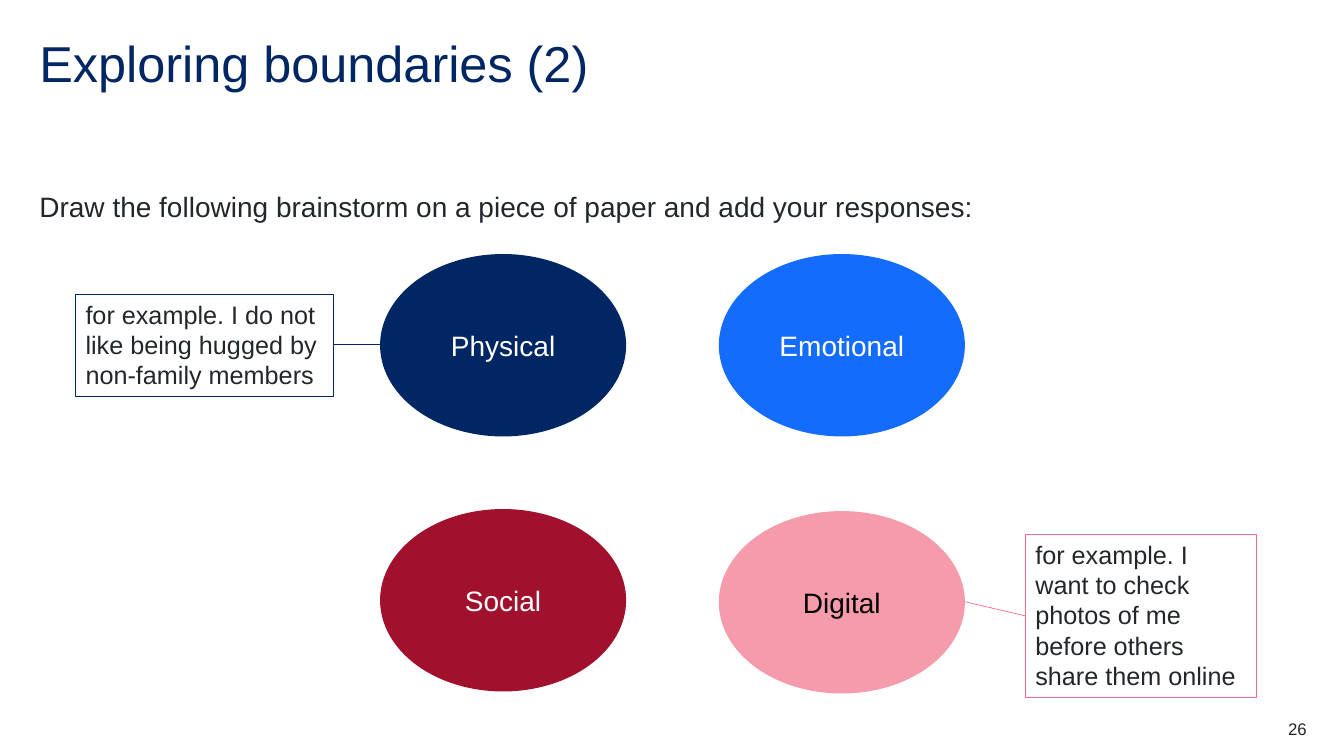
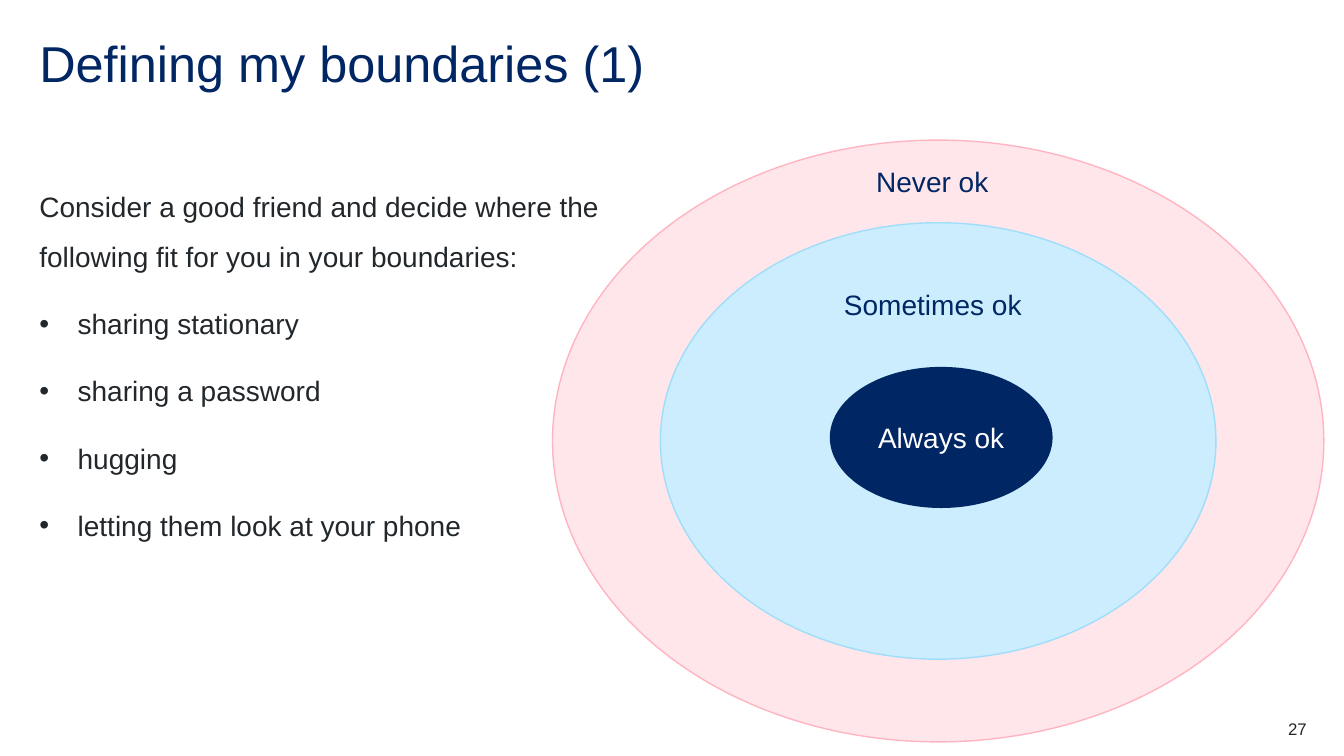
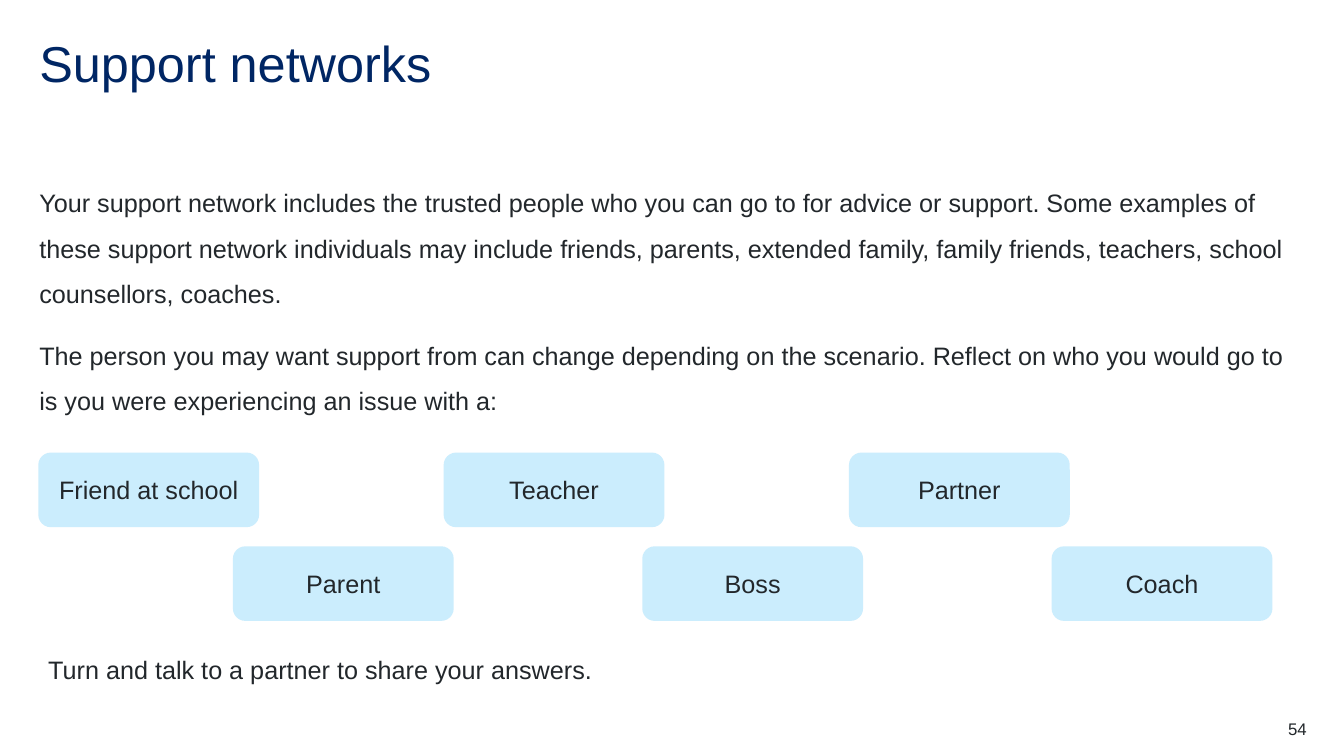
from dataclasses import dataclass

from lxml import etree
from pptx import Presentation
from pptx import util as u
from pptx.dml.color import RGBColor
from pptx.enum import shapes, text
from pptx.oxml.ns import qn

EMU_PER_PX = 9144  # 100 px to the inch
FONT = "Arial"
COLOURS = {
    "navy": "002664",
    "ink": "22272B",
    "white": "FFFFFF",
    "black": "000000",
    "blue": "146CFD",
    "crimson": "A1102C",
    "pink": "F59BAC",
    "coral": "FF6D84",
    "blush": "FFE6EA",
    "blush edge": "FFB5C1",
    "sky": "CBEDFD",
    "sky edge": "9FDEFB",
}
OVAL = shapes.MSO_SHAPE.OVAL
RECTANGLE = shapes.MSO_SHAPE.RECTANGLE
ROUNDED = shapes.MSO_SHAPE.ROUNDED_RECTANGLE
LEFT, CENTER, RIGHT = text.PP_ALIGN.LEFT, text.PP_ALIGN.CENTER, text.PP_ALIGN.RIGHT

MARGIN = 39
CONTENT_WIDTH = 1256
BODY_TOP = 171
BULLET_INDENT = 38
BODY_SPACING = {"line_spacing": 1.5, "space_after": u.Pt(12)}


@dataclass(frozen=True)
class Box:
    x: int
    y: int
    w: int
    h: int

    @property
    def middle(self) -> int:
        return self.y + self.h // 2

    @property
    def right(self) -> int:
        return self.x + self.w

    def emu(self) -> list[int]:
        return [px(n) for n in (self.x, self.y, self.w, self.h)]


@dataclass(frozen=True)
class Style:
    size: int
    colour: str = "ink"
    align: text.PP_ALIGN = LEFT


@dataclass(frozen=True)
class Panel:
    """A preset shape, with or without a label."""
    kind: shapes.MSO_SHAPE
    box: Box
    fill: str | None = None
    edge: str | None = None
    edge_width: float = 1
    label: str = ""
    style: Style = Style(20, "white", CENTER)
    anchor: text.MSO_ANCHOR = text.MSO_ANCHOR.MIDDLE


TITLE = Style(36, "navy")
BODY = Style(20)
SMALL_BODY = Style(18)
RING_LABEL = Style(20, "navy")
CARD_LABEL = Style(18, align=CENTER)
PAGE_NUMBER = Style(12, align=RIGHT)


def px(n: int) -> int:
    return u.Emu(n * EMU_PER_PX)


def rgb(name: str) -> RGBColor:
    return RGBColor.from_string(COLOURS[name])


def add_bullet(paragraph) -> None:
    props = paragraph._p.get_or_add_pPr()
    props.set("marL", str(px(BULLET_INDENT)))
    props.set("indent", str(-px(BULLET_INDENT)))
    etree.SubElement(props, qn("a:buFont")).set("typeface", FONT)
    etree.SubElement(props, qn("a:buChar")).set("char", "•")


def write(frame, lines: list[str], style: Style, spacing: dict | None = None,
          bullets_from: int | None = None) -> None:
    frame.word_wrap = True
    for index, line in enumerate(lines):
        paragraph = frame.paragraphs[0] if index == 0 else frame.add_paragraph()
        paragraph.alignment = style.align
        for name, value in (spacing or {}).items():
            setattr(paragraph, name, value)
        if bullets_from is not None and index >= bullets_from:
            add_bullet(paragraph)
        run = paragraph.add_run()
        run.text = line
        for name, value in {"name": FONT, "size": u.Pt(style.size)}.items():
            setattr(run.font, name, value)
        run.font.color.rgb = rgb(style.colour)


def add_text(slide, box: Box, lines: list[str], style: Style, spacing: dict | None = None,
             bullets_from: int | None = None, inset: bool = False) -> None:
    frame = slide.shapes.add_textbox(*box.emu()).text_frame
    if not inset:
        for side in ("left", "top", "right", "bottom"):
            setattr(frame, f"margin_{side}", 0)
    write(frame, lines, style, spacing, bullets_from)


def add_panel(slide, panel: Panel) -> None:
    shape = slide.shapes.add_shape(panel.kind, *panel.box.emu())
    shape.shadow.inherit = False
    for part, colour in ((shape.fill, panel.fill), (shape.line.fill, panel.edge)):
        if colour:
            part.solid()
            part.fore_color.rgb = rgb(colour)
        else:
            part.background()
    if panel.edge:
        shape.line.width = u.Pt(panel.edge_width)
    if panel.label:
        shape.text_frame.vertical_anchor = panel.anchor
        write(shape.text_frame, [panel.label], panel.style)


def add_link(slide, start: tuple[int, int], end: tuple[int, int], colour: str) -> None:
    link = slide.shapes.add_connector(
        shapes.MSO_CONNECTOR.STRAIGHT, *(px(n) for n in start + end))
    link.line.color.rgb = rgb(colour)
    link.line.width = u.Pt(0.5)
    etree.SubElement(link._element.spPr, qn("a:effectLst"))


def add_page(deck, title: str, number: int):
    """Add a slide with the shared title and page number."""
    slide = deck.slides.add_slide(deck.slide_layouts[6])
    add_text(slide, Box(MARGIN, 39, CONTENT_WIDTH, 60), [title], TITLE, {"line_spacing": 0.9})
    add_text(slide, Box(1217, 713, 79, 20), [str(number)], PAGE_NUMBER)
    return slide


def example(box: Box, edge: str, label: str) -> Panel:
    return Panel(RECTANGLE, box, edge=edge, edge_width=0.75, label=label,
                 style=SMALL_BODY, anchor=text.MSO_ANCHOR.TOP)


def build_exploring(deck) -> None:
    slide = add_page(deck, "Exploring boundaries (2)", 26)
    add_text(slide, Box(MARGIN, BODY_TOP, CONTENT_WIDTH, 68),
             ["Draw the following brainstorm on a piece of paper and add your responses:"],
             BODY, BODY_SPACING)
    physical, emotional, social, digital = (
        Box(x, y, 244, 181) for x, y in ((377, 252), (713, 252), (377, 505), (713, 507)))
    hugging = Box(75, 292, 256, 101)
    photos = Box(1017, 530, 229, 162)
    add_link(slide, (hugging.right, hugging.middle), (physical.x, physical.middle), "navy")
    add_link(slide, (digital.right, digital.middle), (photos.x, photos.middle), "coral")
    for box, fill, label, colour in (
        (physical, "navy", "Physical", "white"),
        (emotional, "blue", "Emotional", "white"),
        (social, "crimson", "Social", "white"),
        (digital, "pink", "Digital", "black"),
    ):
        add_panel(slide, Panel(OVAL, box, fill, label=label, style=Style(20, colour, CENTER)))
    add_panel(slide, example(
        hugging, "navy", "for example. I do not like being hugged by non-family members"))
    add_panel(slide, example(
        photos, "coral",
        "for example. I want to check photos of me before others share them online"))


def build_defining(deck) -> None:
    slide = add_page(deck, "Defining my boundaries (1)", 27)
    add_text(slide, Box(MARGIN, BODY_TOP, 565, 526), [
        "Consider a good friend and decide where the following fit for you in your boundaries:",
        "sharing stationary",
        "sharing a password",
        "hugging",
        "letting them look at your phone",
    ], BODY, BODY_SPACING, bullets_from=1)
    for ring in (
        Panel(OVAL, Box(548, 139, 765, 597), "blush", "blush edge"),
        Panel(OVAL, Box(655, 221, 551, 433), "sky", "sky edge"),
        Panel(OVAL, Box(823, 364, 221, 140), "navy", label="Always ok"),
    ):
        add_panel(slide, ring)
    add_text(slide, Box(837, 285, 188, 100), ["Sometimes ok"], RING_LABEL)
    add_text(slide, Box(869, 163, 124, 42), ["Never ok"], RING_LABEL)


def build_support(deck) -> None:
    slide = add_page(deck, "Support networks", 54)
    add_text(slide, Box(MARGIN, BODY_TOP, CONTENT_WIDTH, 265), [
        "Your support network includes the trusted people who you can go to for advice or "
        "support. Some examples of these support network individuals may include friends, "
        "parents, extended family, family friends, teachers, school counsellors, coaches.",
        "The person you may want support from can change depending on the scenario. Reflect "
        "on who you would go to is you were experiencing an issue with a:",
    ], SMALL_BODY, BODY_SPACING)
    for left, top, step, people in (
        (38, 449, 402, ("Friend at school", "Teacher", "Partner")),
        (231, 542, 406, ("Parent", "Boss", "Coach")),
    ):
        for column, person in enumerate(people):
            add_panel(slide, Panel(ROUNDED, Box(left + column * step, top, 219, 74), "sky",
                                   label=person, style=CARD_LABEL))
    add_text(slide, Box(38, 644, 667, 40),
             ["Turn and talk to a partner to share your answers."], SMALL_BODY, inset=True)


def main() -> None:
    deck = Presentation()
    deck.slide_width, deck.slide_height = px(1333), px(750)
    for build in (build_exploring, build_defining, build_support):
        build(deck)
    deck.save("out.pptx")


if __name__ == "__main__":
    main()
